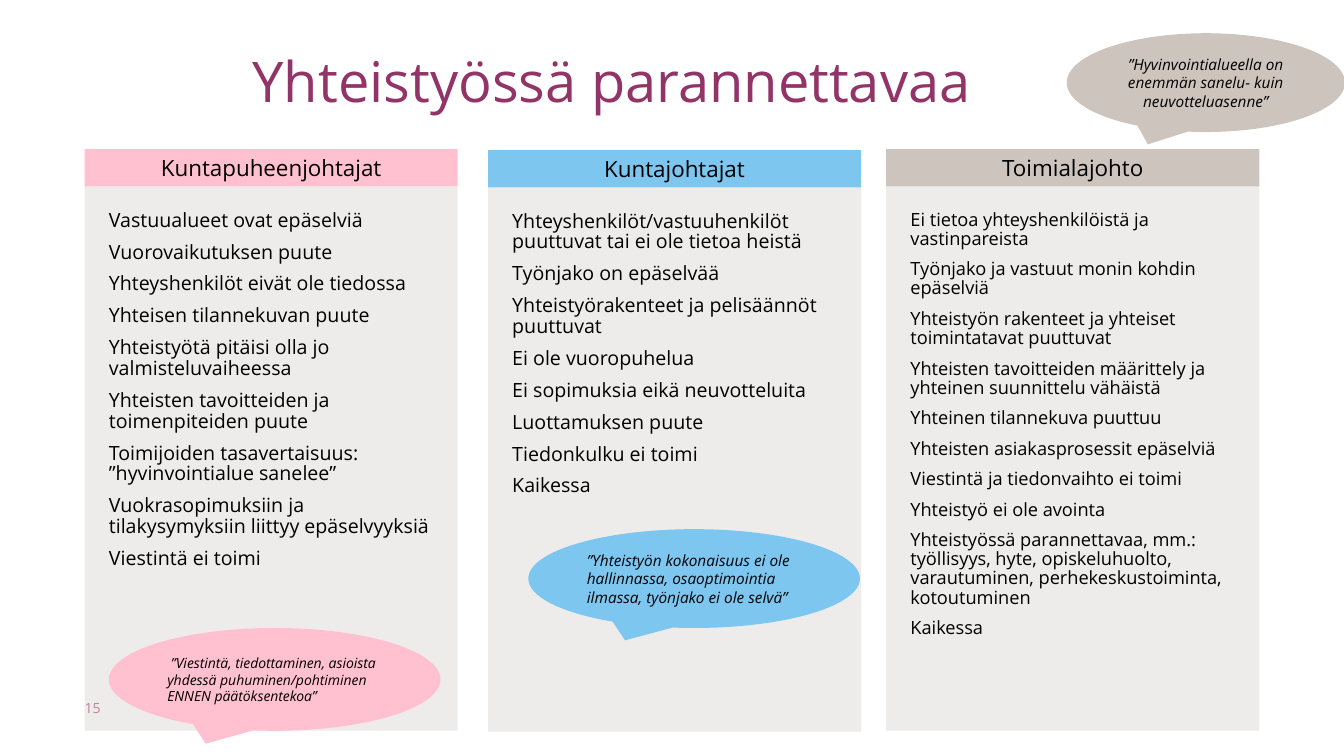
from dataclasses import dataclass

from lxml.etree import SubElement
from pptx import Presentation
from pptx.dml.color import RGBColor
from pptx.enum.shapes import MSO_SHAPE
from pptx.enum.text import MSO_ANCHOR, PP_ALIGN
from pptx.oxml.ns import qn
from pptx.shapes.autoshape import Shape
from pptx.util import Inches, Pt

FONT = "Open Sans"
PLUM, BLACK, PANEL = "923468", "000000", "DFDAD6"
PINK, BLUE, TAUPE = "FFC0D0", "7DC6F0", "CCC4BD"

# Shares of the slide, in percent
COLUMN_WIDTH, HEADER_HEIGHT, PANEL_HEIGHT = 27.76, 4.93, 72


@dataclass(frozen=True)
class Area:
    left: float
    top: float
    width: float
    height: float


@dataclass(frozen=True)
class Column:
    left: float
    top: float
    heading: str
    fill: str
    size: int
    points: list[str]


@dataclass(frozen=True)
class Callout:
    area: Area
    fill: str
    quote: str
    size: int
    align: PP_ALIGN = PP_ALIGN.LEFT


COLUMNS = [
    Column(6.3, 19.73, "Kuntapuheenjohtajat", PINK, 14, [
        "Vastuualueet ovat epäselviä",
        "Vuorovaikutuksen puute",
        "Yhteyshenkilöt eivät ole tiedossa",
        "Yhteisen tilannekuvan puute",
        "Yhteistyötä pitäisi olla jo valmisteluvaiheessa",
        "Yhteisten tavoitteiden ja toimenpiteiden puute",
        "Toimijoiden tasavertaisuus: ”hyvinvointialue sanelee”",
        "Vuokrasopimuksiin ja tilakysymyksiin liittyy epäselvyyksiä",
        "Viestintä ei toimi",
    ]),
    Column(36.31, 19.87, "Kuntajohtajat", BLUE, 14, [
        "Yhteyshenkilöt/vastuuhenkilöt puuttuvat tai ei ole tietoa heistä",
        "Työnjako on epäselvää",
        "Yhteistyörakenteet ja pelisäännöt puuttuvat",
        "Ei ole vuoropuhelua",
        "Ei sopimuksia eikä neuvotteluita",
        "Luottamuksen puute",
        "Tiedonkulku ei toimi",
        "Kaikessa",
    ]),
    Column(65.94, 19.73, "Toimialajohto", TAUPE, 13, [
        "Ei tietoa yhteyshenkilöistä ja vastinpareista",
        "Työnjako ja vastuut monin kohdin epäselviä",
        "Yhteistyön rakenteet ja yhteiset toimintatavat puuttuvat",
        "Yhteisten tavoitteiden määrittely ja yhteinen suunnittelu vähäistä",
        "Yhteinen tilannekuva puuttuu",
        "Yhteisten asiakasprosessit epäselviä",
        "Viestintä ja tiedonvaihto ei toimi",
        "Yhteistyö ei ole avointa",
        "Yhteistyössä parannettavaa, mm.: työllisyys, hyte, opiskeluhuolto, "
        "varautuminen, perhekeskustoiminta, kotoutuminen",
        "Kaikessa",
    ]),
]

CALLOUTS = [
    Callout(Area(39.31, 70, 24.68, 13.07), BLUE,
            "”Yhteistyön kokonaisuus ei ole hallinnassa, osaoptimointia ilmassa, "
            "työnjako ei ole selvä”", 11),
    Callout(Area(8.1, 83.07, 24.68, 13.6), PINK,
            " ”Viestintä, tiedottaminen, asioista yhdessä puhuminen/pohtiminen "
            "ENNEN päätöksentekoa”", 10),
    Callout(Area(79.37, 4.4, 20.7, 13.07), TAUPE,
            "”Hyvinvointialueella on enemmän sanelu- kuin neuvotteluasenne”",
            11, PP_ALIGN.CENTER),
]

deck = Presentation()
deck.slide_width, deck.slide_height = Inches(13.33), Inches(7.5)
page = deck.slides.add_slide(deck.slide_layouts[5])


def color(value: str) -> RGBColor:
    return RGBColor.from_string(value)


def place(area: Area) -> tuple[int, int, int, int]:
    """Turn percent shares into slide lengths."""
    wide, high = deck.slide_width / 100, deck.slide_height / 100
    return (round(area.left * wide), round(area.top * high),
            round(area.width * wide), round(area.height * high))


def write(box: Shape, lines: list[str], *, size: int, ink: str = BLACK,
          align: PP_ALIGN = PP_ALIGN.LEFT, anchor: MSO_ANCHOR = MSO_ANCHOR.TOP,
          inset: float | None = None, italic: bool = False,
          line_spacing: float = 1.0, gap: int = 0) -> None:
    frame = box.text_frame
    frame.word_wrap = True
    frame.vertical_anchor = anchor
    if inset is not None:
        frame.margin_left = frame.margin_right = Inches(inset)
        frame.margin_top = frame.margin_bottom = Inches(inset)
    for index, line in enumerate(lines):
        para = frame.add_paragraph() if index else frame.paragraphs[0]
        para.alignment = align
        para.line_spacing = line_spacing
        para.space_before = Pt(gap if index else 0)
        span = para.add_run()
        span.text = line
        span.font.name, span.font.size = FONT, Pt(size)
        span.font.italic = italic
        span.font.color.rgb = color(ink)


def add_block(kind: MSO_SHAPE, area: Area, fill: str, opacity: int = 100) -> Shape:
    box = page.shapes.add_shape(kind, *place(area))
    box.shadow.inherit = False
    box.line.fill.background()
    box.fill.solid()
    box.fill.fore_color.rgb = color(fill)
    if opacity < 100:
        tint = box.fill._xPr.find(".//" + qn("a:srgbClr"))
        SubElement(tint, qn("a:alpha"), val=str(opacity * 1000))
    return box


def add_page_number(area: Area, number: str) -> None:
    box = page.shapes.add_textbox(*place(area))
    write(box, [number], size=10, ink=PLUM, anchor=MSO_ANCHOR.MIDDLE, inset=0)


def add_panel(column: Column) -> None:
    area = Area(column.left, column.top + HEADER_HEIGHT, COLUMN_WIDTH, PANEL_HEIGHT)
    box = add_block(MSO_SHAPE.RECTANGLE, area, PANEL, opacity=50)
    write(box, column.points, size=column.size, inset=0.24, line_spacing=0.88, gap=8)


def add_header(column: Column) -> None:
    area = Area(column.left, column.top, COLUMN_WIDTH, HEADER_HEIGHT)
    box = add_block(MSO_SHAPE.RECTANGLE, area, column.fill)
    write(box, [column.heading], size=16, align=PP_ALIGN.CENTER)


def add_callout(callout: Callout) -> None:
    box = add_block(MSO_SHAPE.OVAL_CALLOUT, callout.area, callout.fill)
    write(box, [callout.quote], size=callout.size, align=callout.align,
          anchor=MSO_ANCHOR.MIDDLE, italic=True)


# Title
title = page.shapes.title
title.left, title.top, title.width, title.height = place(Area(5.7, 7.2, 79.6, 7.2))
write(title, ["Yhteistyössä parannettavaa"], size=40, ink=PLUM,
      align=PP_ALIGN.CENTER, inset=0, line_spacing=0.9)

# The page number lies under the translucent panels
add_page_number(Area(6.3, 92, 3.53, 3.2), "15")

# Columns
for group in COLUMNS:
    add_panel(group)
for group in COLUMNS:
    add_header(group)

# Quotes
for quote in CALLOUTS:
    add_callout(quote)

deck.save("out.pptx")
